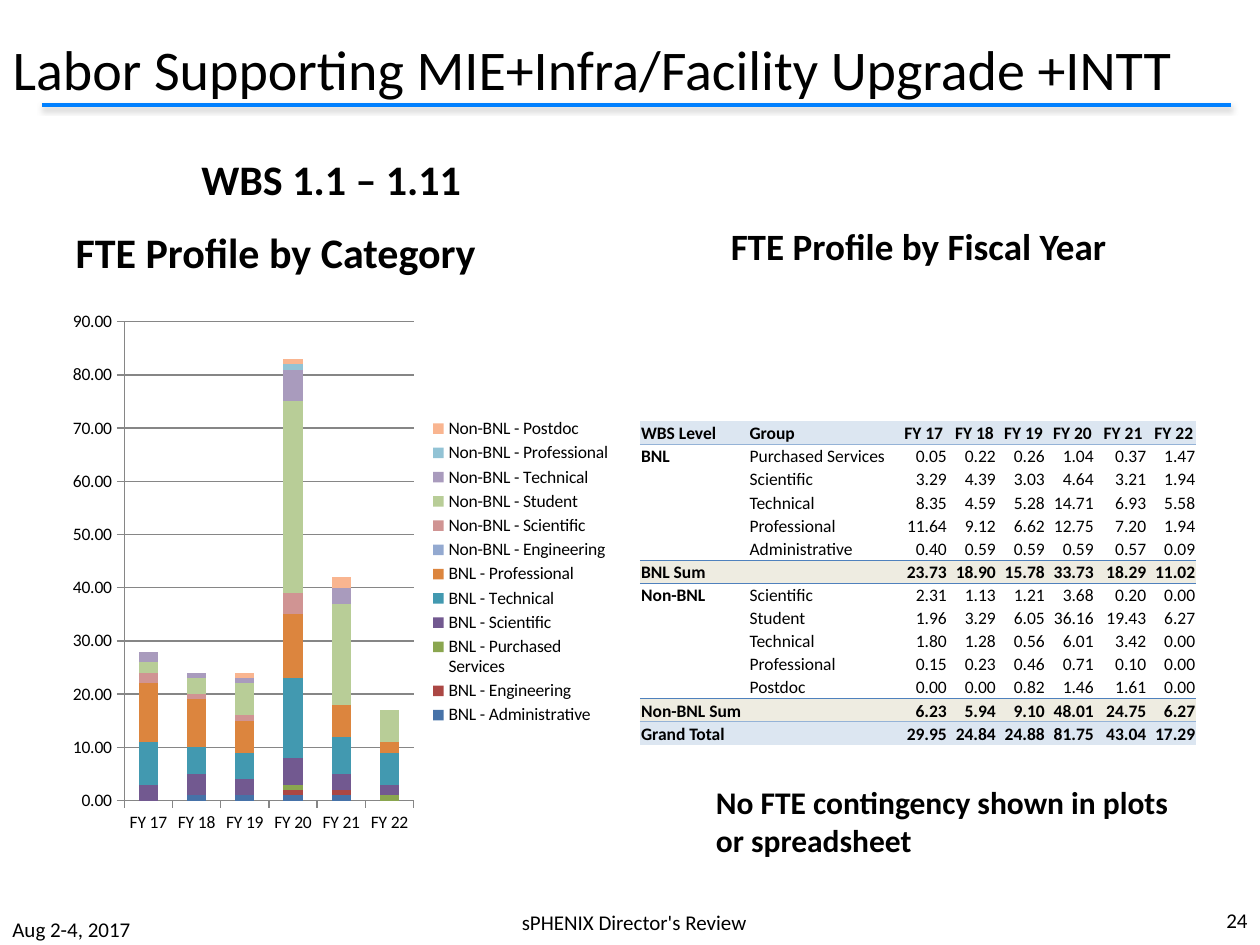
from dataclasses import dataclass
from typing import NamedTuple

from lxml.etree import SubElement
from pptx import Presentation
from pptx.chart.data import CategoryChartData
from pptx.dml.color import RGBColor
from pptx.enum.chart import XL_CHART_TYPE as ChartType, XL_LEGEND_POSITION as LegendPosition
from pptx.enum.chart import XL_TICK_MARK as TickMark
from pptx.enum.shapes import MSO_CONNECTOR as Connector
from pptx.enum.text import MSO_ANCHOR as Anchor, MSO_AUTO_SIZE as AutoSize, PP_ALIGN as Align
from pptx.oxml import parse_xml
from pptx.oxml.ns import nsdecls, qn
from pptx.util import Pt


@dataclass(frozen=True)
class Theme:
    font: str = "Calibri"
    ink: str = "000000"
    rule: str = "0080FF"
    grid: str = "868686"
    header_fill: str = "DCE6F1"
    sum_fill: str = "EEECE1"
    light_border: str = "95B3D7"
    dark_border: str = "4F81BD"
    title_size: float = 32
    heading_size: float = 24
    subheading_size: float = 21.2
    note_size: float = 18
    footer_size: float = 12
    small_size: float = 10


THEME = Theme()


class Frame(NamedTuple):
    left: float
    top: float
    width: float
    height: float

    def lengths(self) -> list:
        return [Pt(value) for value in self]


class Label(NamedTuple):
    lines: tuple
    frame: Frame
    size: float
    bold: bool = False
    align: Align = Align.LEFT
    anchor: Anchor = Anchor.MIDDLE
    wrap: bool = True
    bottom_inset: float = 3.6


class Series(NamedTuple):
    name: str
    color: str
    values: tuple


class Row(NamedTuple):
    level: str = ""
    group: str = ""
    values: tuple = ("",) * 6
    fill: str = ""
    border: str = ""
    bold: bool = False


YEARS = tuple(f"FY {year}" for year in range(17, 23))

TITLE = Label(("Labor Supporting MIE+Infra/Facility Upgrade +INTT",),
              Frame(0, 6, 696, 66), THEME.title_size)
CATEGORY_HEADING = Label(("FTE Profile by Category",), Frame(36, 114, 300, 48),
                         THEME.heading_size, True, anchor=Anchor.BOTTOM)
YEAR_HEADING = Label(("FTE Profile by Fiscal Year",), Frame(360, 126, 330, 48),
                     THEME.subheading_size, True, Align.CENTER, Anchor.BOTTOM, bottom_inset=21)
TEXT_BOXES = (
    Label(("WBS 1.1 – 1.11",), Frame(108, 84, 164, 36), THEME.heading_size, True,
          anchor=Anchor.TOP, wrap=False),
    Label(("Aug 2-4, 2017",), Frame(0, 522, 168, 18), THEME.footer_size),
    Label(("24",), Frame(678, 511, 42, 29), THEME.footer_size, align=Align.RIGHT),
    Label(("sPHENIX Director's Review",), Frame(248.4, 516, 228, 22), THEME.footer_size,
          align=Align.CENTER),
    Label(("No FTE contingency shown in plots", "or spreadsheet"), Frame(402, 444, 276, 51),
          THEME.note_size, True, anchor=Anchor.TOP, wrap=False),
)

SERIES = (
    Series("BNL - Administrative", "4672A8", (0, 1, 1, 1, 1, 0)),
    Series("BNL - Engineering", "AB4744", (0, 0, 0, 1, 1, 0)),
    Series("BNL - Purchased Services", "8AA64F", (0, 0, 0, 1, 0, 1)),
    Series("BNL - Scientific", "725990", (3, 4, 3, 5, 3, 2)),
    Series("BNL - Technical", "4299B0", (8, 5, 5, 15, 7, 6)),
    Series("BNL - Professional", "DC853E", (11, 9, 6, 12, 6, 2)),
    Series("Non-BNL - Engineering", "93A9D0", (0, 0, 0, 0, 0, 0)),
    Series("Non-BNL - Scientific", "D09493", (2, 1, 1, 4, 0, 0)),
    Series("Non-BNL - Student", "B8CD97", (2, 3, 6, 36, 19, 6)),
    Series("Non-BNL - Technical", "A99BBD", (2, 1, 1, 6, 3, 0)),
    Series("Non-BNL - Professional", "92C3D5", (0, 0, 0, 1, 0, 0)),
    Series("Non-BNL - Postdoc", "F9B590", (0, 0, 1, 1, 2, 0)),
)

ROWS = (
    Row(),
    Row("WBS Level", "Group", YEARS, THEME.header_fill, THEME.light_border, True),
    Row("BNL", "Purchased Services", (0.05, 0.22, 0.26, 1.04, 0.37, 1.47)),
    Row("", "Scientific", (3.29, 4.39, 3.03, 4.64, 3.21, 1.94)),
    Row("", "Technical", (8.35, 4.59, 5.28, 14.71, 6.93, 5.58)),
    Row("", "Professional", (11.64, 9.12, 6.62, 12.75, 7.2, 1.94)),
    Row("", "Administrative", (0.4, 0.59, 0.59, 0.59, 0.57, 0.09), border=THEME.dark_border),
    Row("BNL Sum", "", (23.73, 18.9, 15.78, 33.73, 18.29, 11.02),
        THEME.sum_fill, THEME.dark_border, True),
    Row("Non-BNL", "Scientific", (2.31, 1.13, 1.21, 3.68, 0.2, 0.0)),
    Row("", "Student", (1.96, 3.29, 6.05, 36.16, 19.43, 6.27)),
    Row("", "Technical", (1.8, 1.28, 0.56, 6.01, 3.42, 0.0)),
    Row("", "Professional", (0.15, 0.23, 0.46, 0.71, 0.1, 0.0)),
    Row("", "Postdoc", (0.0, 0.0, 0.82, 1.46, 1.61, 0.0), border=THEME.dark_border),
    Row("Non-BNL Sum", "", (6.23, 5.94, 9.1, 48.01, 24.75, 6.27),
        THEME.sum_fill, THEME.light_border, True),
    Row("Grand Total", "", (29.95, 24.84, 24.88, 81.75, 43.04, 17.29),
        THEME.header_fill, bold=True),
)
COLUMN_WIDTHS = (62, 84, 30, 28, 28, 28, 30, 28)
ROW_HEIGHT = 13.22
NO_STYLE_TABLE = "{2D5ABB26-0587-4C30-8999-92F81FD0307C}"


def set_font(font, size: float, bold: bool = False) -> None:
    font.name, font.size, font.bold = THEME.font, Pt(size), bold
    font.color.rgb = RGBColor.from_string(THEME.ink)


def write_label(box, label: Label) -> None:
    box.left, box.top, box.width, box.height = label.frame.lengths()
    frame = box.text_frame
    frame.auto_size = AutoSize.NONE if label.wrap else AutoSize.SHAPE_TO_FIT_TEXT
    frame.word_wrap, frame.vertical_anchor = label.wrap, label.anchor
    frame.margin_bottom = Pt(label.bottom_inset)
    frame.text = "\n".join(label.lines)
    for para in frame.paragraphs:
        para.alignment, para.space_before = label.align, Pt(0)
        set_font(para.font, label.size, label.bold)


def add_title_rule(slide) -> None:
    rule = slide.shapes.add_connector(Connector.STRAIGHT, Pt(24), Pt(60), Pt(703.5), Pt(60))
    rule.line.color.rgb, rule.line.width = RGBColor.from_string(THEME.rule), Pt(2.25)
    rule._element.spPr.append(parse_xml(
        f'<a:effectLst {nsdecls("a")}><a:outerShdw blurRad="{Pt(3.1)}" dist="{Pt(1.6)}" '
        'dir="5400000"><a:srgbClr val="808080"><a:alpha val="38000"/></a:srgbClr>'
        '</a:outerShdw></a:effectLst>'))


def place_chart_part(part, x: float, y: float, w: float, h: float, inner: bool = False) -> None:
    """Fix a plot area or legend at fractions of the chart."""
    for old in part.findall(qn("c:layout")):
        part.remove(old)
    target = '<c:layoutTarget val="inner"/>' if inner else ""
    layout = parse_xml(
        f'<c:layout {nsdecls("c")}><c:manualLayout>{target}<c:xMode val="edge"/>'
        f'<c:yMode val="edge"/><c:x val="{x}"/><c:y val="{y}"/><c:w val="{w}"/><c:h val="{h}"/>'
        '</c:manualLayout></c:layout>')
    part.insert(0 if inner else 1, layout)


def add_category_chart(slide, frame: Frame) -> None:
    data = CategoryChartData(number_format="#,##0.00")
    data.categories = YEARS
    for series in SERIES:
        data.add_series(series.name, series.values)
    chart = slide.shapes.add_chart(ChartType.COLUMN_STACKED, *frame.lengths(), data).chart
    set_font(chart.font, THEME.small_size)
    chart.has_title = False
    plot = chart.plots[0]
    plot.gap_width, plot.overlap, plot.vary_by_categories = 150, 100, False
    for drawn, series in zip(plot.series, SERIES):
        drawn.format.fill.solid()
        drawn.format.fill.fore_color.rgb = RGBColor.from_string(series.color)
    axis = chart.value_axis
    axis.minimum_scale, axis.maximum_scale, axis.major_unit = 0, 90, 10
    axis.has_major_gridlines = True
    axis.tick_labels.number_format = "#,##0.00"
    axis.tick_labels.number_format_is_linked = False
    for scale in (axis, chart.category_axis):
        scale.major_tick_mark = TickMark.OUTSIDE
    for part in (axis, chart.category_axis, axis.major_gridlines):
        part.format.line.color.rgb = RGBColor.from_string(THEME.grid)
    chart.has_legend = True
    chart.legend.position, chart.legend.include_in_layout = LegendPosition.RIGHT, False
    place_chart_part(chart._chartSpace.chart.plotArea, 0.11, 0.04, 0.52, 0.88, inner=True)
    place_chart_part(chart.legend._element, 0.67, 0.21, 0.32, 0.58)


def write_cell(cell, text: str, row: Row, bold: bool, align: Align) -> None:
    cell.margin_left = Pt(3 if align == Align.CENTER else 0.7)
    cell.margin_right = cell.margin_top = Pt(0.7)
    cell.margin_bottom, cell.vertical_anchor = Pt(0), Anchor.BOTTOM
    para = cell.text_frame.paragraphs[0]
    para.alignment = align
    set_font(para.font, THEME.small_size, bold)
    if text:
        para.add_run().text = text
    else:
        SubElement(para._p, qn("a:endParaRPr")).set("sz", str(int(THEME.small_size * 100)))
    if row.border:
        cell._tc.get_or_add_tcPr().append(parse_xml(
            f'<a:lnB {nsdecls("a")} w="{Pt(0.5)}"><a:solidFill><a:srgbClr val="{row.border}"/>'
            '</a:solidFill></a:lnB>'))
    if row.fill:
        cell.fill.solid()
        cell.fill.fore_color.rgb = RGBColor.from_string(row.fill)
    else:
        cell.fill.background()


def add_year_table(slide, left: float, top: float) -> None:
    frame = Frame(left, top, sum(COLUMN_WIDTHS), ROW_HEIGHT * len(ROWS))
    table = slide.shapes.add_table(len(ROWS), len(COLUMN_WIDTHS), *frame.lengths()).table
    table.first_row = table.horz_banding = False
    table._tbl.tblPr.find(qn("a:tableStyleId")).text = NO_STYLE_TABLE
    for column, width in zip(table.columns, COLUMN_WIDTHS):
        column.width = Pt(width)
    for index, row in enumerate(ROWS):
        table.rows[index].height = Pt(ROW_HEIGHT)
        for place, value in enumerate((row.level, row.group, *row.values)):
            number = isinstance(value, float)
            text = f"{value:.2f}" if number else value
            align = Align.RIGHT if number else Align.CENTER if place > 1 else Align.LEFT
            write_cell(table.cell(index, place), text, row, row.bold or place == 0, align)


def main() -> None:
    deck = Presentation()
    deck.slide_width, deck.slide_height = Pt(720), Pt(540)
    slide = deck.slides.add_slide(deck.slide_layouts.get_by_name("Comparison"))
    add_title_rule(slide)
    title, left_heading, left_body, right_heading, right_body = slide.placeholders
    for unused in (left_body, right_body):
        unused._element.getparent().remove(unused._element)
    write_label(title, TITLE)
    write_label(right_heading, YEAR_HEADING)
    write_label(left_heading, CATEGORY_HEADING)
    add_category_chart(slide, Frame(36, 171.4, 318, 311))
    add_year_table(slide, 365.7, 227.5)
    for label in TEXT_BOXES:
        write_label(slide.shapes.add_textbox(*label.frame.lengths()), label)
    deck.save("out.pptx")


if __name__ == "__main__":
    main()
